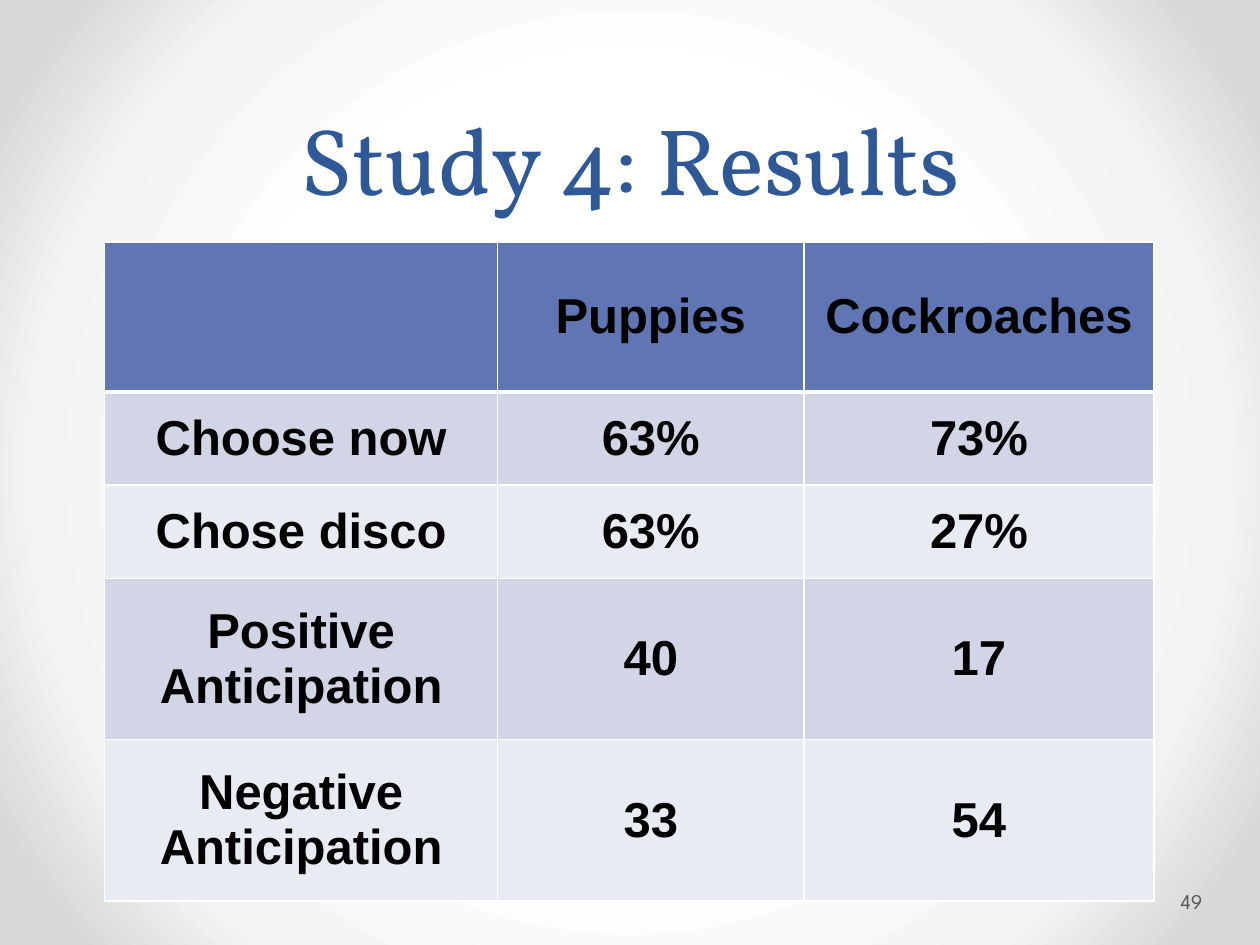
from lxml.etree import SubElement
from pptx import Presentation
from pptx.dml.color import RGBColor
from pptx.enum.text import MSO_ANCHOR as Anchor, PP_ALIGN as Align
from pptx.oxml.ns import qn
from pptx.util import Inches, Pt

COLORS = {
    "title": "2F5897", "number": "595959", "text": "000000",
    "header": "6076B4", "odd": "D1D5E5", "even": "E9EBF2", "border": "FFFFFF",
}
BACKGROUND_STOPS = [(0, "FFFFFF"), (50, "FFFFFF"), (76, "F3F3F3"),
                    (92, "D8D8D8"), (100, "D8D8D8")]
COLUMN_WIDTHS = [3.12, 2.43, 2.78]
ROW_HEIGHTS = [1.19, 0.74, 0.74, 1.28, 1.28]
RESULTS = [
    ["", "Puppies", "Cockroaches"],
    ["Choose now", "63%", "73%"],
    ["Chose disco", "63%", "27%"],
    ["Positive Anticipation", "40", "17"],
    ["Negative Anticipation", "33", "54"],
]


def place(shape, left, top, width, height):
    shape.left, shape.top = Inches(left), Inches(top)
    shape.width, shape.height = Inches(width), Inches(height)


def add_run(paragraph, text, font, size, color, bold=False):
    run = paragraph.add_run()
    run.text = text
    run.font.name = font
    run.font.size = Pt(size)
    run.font.bold = bold
    run.font.color.rgb = RGBColor.from_string(COLORS[color])


def set_background(slide):
    """Fill the background with a gradient that runs from the centre outwards."""
    slide.background.fill.gradient()
    gradient = next(slide.element.iter(qn("a:gradFill")))
    for child in list(gradient):
        gradient.remove(child)
    stops = SubElement(gradient, qn("a:gsLst"))
    for position, color in BACKGROUND_STOPS:
        stop = SubElement(stops, qn("a:gs"), pos=str(position * 1000))
        SubElement(stop, qn("a:srgbClr"), val=color)
    circle = SubElement(gradient, qn("a:path"), path="circle")
    SubElement(circle, qn("a:fillToRect"), l="50000", t="50000", r="50000", b="50000")


def add_title(slide, text):
    title = slide.shapes.title
    place(title, 0.5, 0, 9, 1.75)
    frame = title.text_frame
    frame.vertical_anchor = Anchor.BOTTOM
    paragraph = frame.paragraphs[0]
    paragraph.alignment = Align.CENTER
    paragraph.line_spacing = 1.07
    add_run(paragraph, text, "Vollkorn", 54, "title")


def add_slide_number(slide, text):
    box = slide.shapes.add_textbox(Inches(9.34), Inches(6.95), Inches(0.61), Inches(0.4))
    frame = box.text_frame
    frame.word_wrap = True
    frame.vertical_anchor = Anchor.MIDDLE
    frame.margin_left, frame.margin_right = Inches(0.03), Inches(0.05)
    add_run(frame.paragraphs[0], text, "League Spartan", 12, "number")


def set_borders(cell, bottom_width):
    properties = cell._tc.get_or_add_tcPr()
    for side, width in (("L", 1), ("R", 1), ("T", 1), ("B", bottom_width)):
        line = SubElement(properties, qn(f"a:ln{side}"), w=str(Pt(width)))
        fill = SubElement(line, qn("a:solidFill"))
        SubElement(fill, qn("a:srgbClr"), val=COLORS["border"])


def format_cell(cell, text, fill, bottom_width):
    set_borders(cell, bottom_width)
    cell.fill.solid()
    cell.fill.fore_color.rgb = RGBColor.from_string(COLORS[fill])
    cell.vertical_anchor = Anchor.MIDDLE
    if text:
        paragraph = cell.text_frame.paragraphs[0]
        paragraph.alignment = Align.CENTER
        add_run(paragraph, text, "Arial", 28, "text", bold=True)


def add_results_table(slide):
    table = slide.shapes.add_table(
        len(ROW_HEIGHTS), len(COLUMN_WIDTHS), Inches(0.83), Inches(1.92),
        Inches(sum(COLUMN_WIDTHS)), Inches(sum(ROW_HEIGHTS))).table
    for column, width in zip(table.columns, COLUMN_WIDTHS):
        column.width = Inches(width)
    for index, (row, height) in enumerate(zip(table.rows, ROW_HEIGHTS)):
        row.height = Inches(height)
        is_header = index == 0
        fill = "header" if is_header else ("odd" if index % 2 else "even")
        for cell, text in zip(row.cells, RESULTS[index]):
            format_cell(cell, text, fill, 3 if is_header else 1)


def main():
    presentation = Presentation()
    presentation.slide_width, presentation.slide_height = Inches(10), Inches(7.5)
    slide = presentation.slides.add_slide(presentation.slide_layouts.get_by_name("Title Only"))
    set_background(slide)
    add_title(slide, "Study 4: Results")
    add_slide_number(slide, "49")
    add_results_table(slide)
    presentation.save("out.pptx")


if __name__ == "__main__":
    main()
